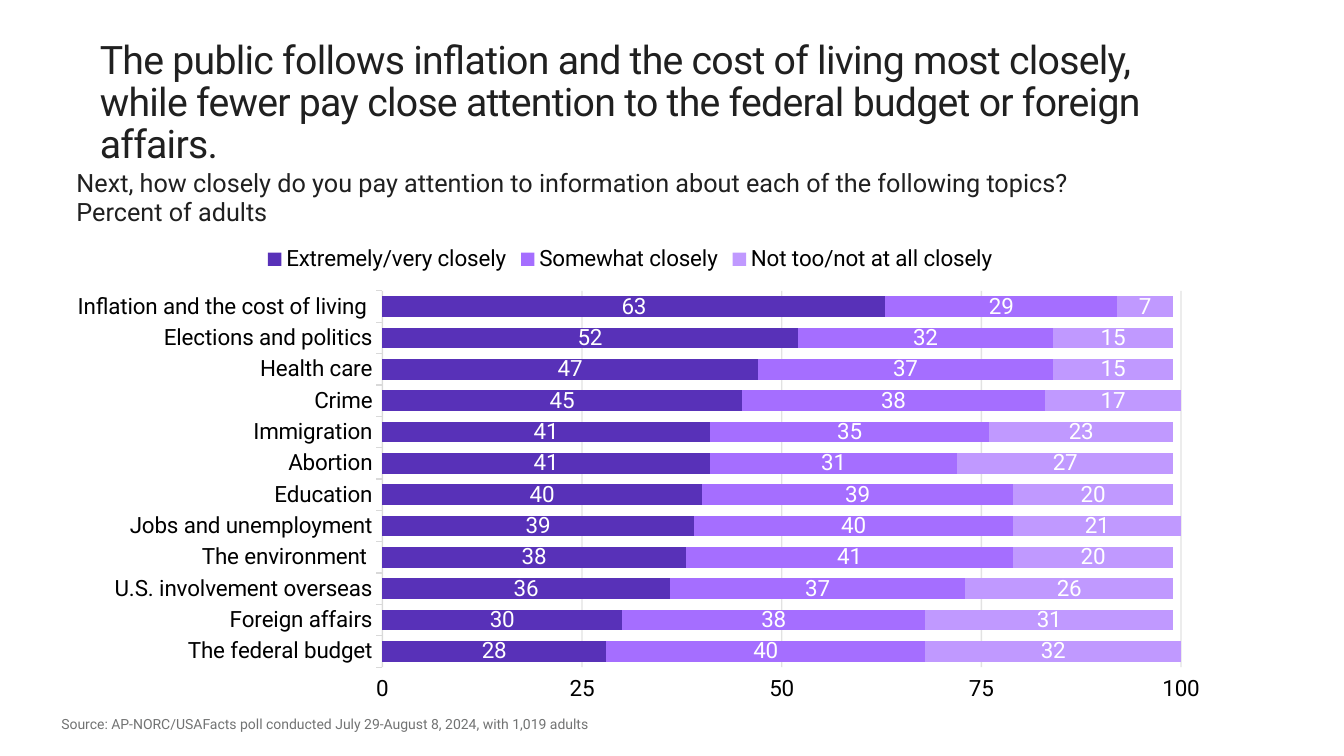
from lxml.etree import SubElement
from pptx import Presentation
from pptx.chart.data import CategoryChartData
from pptx.dml.color import RGBColor
from pptx.enum.chart import (XL_CHART_TYPE, XL_LABEL_POSITION, XL_LEGEND_POSITION,
                             XL_TICK_LABEL_POSITION, XL_TICK_MARK)
from pptx.enum.text import MSO_ANCHOR, MSO_AUTO_SIZE, PP_ALIGN
from pptx.oxml import parse_xml
from pptx.oxml.ns import nsdecls, qn
from pptx.util import Inches, Pt

FONT = "Roboto"
COLORS = {"heading": "202020", "source": "727373", "black": "000000", "white": "FFFFFF",
          "axis": "D9D9D9", "grid": "C7C7C7"}
SERIES = {"Extremely/very closely": "5831B8",
          "Somewhat closely": "A56EFF",
          "Not too/not at all closely": "C099FF"}
TOPICS = [
    ("The federal budget", 28, 40, 32),
    ("Foreign affairs", 30, 38, 31),
    ("U.S. involvement overseas", 36, 37, 26),
    ("The environment ", 38, 41, 20),
    ("Jobs and unemployment", 39, 40, 21),
    ("Education", 40, 39, 20),
    ("Abortion", 41, 31, 27),
    ("Immigration", 41, 35, 23),
    ("Crime", 45, 38, 17),
    ("Health care", 47, 37, 15),
    ("Elections and politics", 52, 32, 15),
    ("Inflation and the cost of living ", 63, 29, 7),
]
PLOT_AREA = {"x": 0.286, "y": 0.114, "w": 0.69, "h": 0.763}


def rgb(name):
    return RGBColor.from_string(COLORS[name])


def style_font(font, size, color):
    font.name = FONT
    font.size = Pt(size)
    font.bold = False
    font.color.rgb = rgb(color)


def fill_text(sp, box, text, size, color, spacing, inset=0.0, anchor=MSO_ANCHOR.TOP):
    """Place a text shape and give it one formatted paragraph."""
    sp.left, sp.top, sp.width, sp.height = (Inches(v) for v in box)
    tf = sp.text_frame
    tf.word_wrap = True
    tf.auto_size = MSO_AUTO_SIZE.NONE
    tf.vertical_anchor = anchor
    tf.margin_left = Inches(inset)
    tf.margin_top = tf.margin_right = tf.margin_bottom = 0
    p = tf.paragraphs[0]
    p.text = text
    p.alignment = PP_ALIGN.LEFT
    p.line_spacing = spacing
    for r in p.runs:
        style_font(r.font, size, color)


def add_text(slide, box, *args, **kwargs):
    sp = slide.shapes.add_textbox(0, 0, 0, 0)
    fill_text(sp, box, *args, **kwargs)


def set_plot_layout(chart):
    """Fix the inner plot area as fractions of the chart."""
    area = chart._chartSpace.chart.plotArea
    for old in area.findall(qn("c:layout")):
        area.remove(old)
    layout = parse_xml(
        f'<c:layout {nsdecls("c")}><c:manualLayout><c:layoutTarget val="inner"/>'
        '<c:xMode val="edge"/><c:yMode val="edge"/>'
        + "".join(f'<c:{k} val="{v}"/>' for k, v in PLOT_AREA.items())
        + "</c:manualLayout></c:layout>")
    area.insert(0, layout)


def style_axes(chart):
    cat, val = chart.category_axis, chart.value_axis
    for axis in (cat, val):
        style_font(axis.tick_labels.font, 16, "black")
    cat.major_tick_mark = XL_TICK_MARK.OUTSIDE
    cat.format.line.color.rgb = rgb("axis")
    cat.format.line.width = Pt(0.75)
    val.minimum_scale, val.maximum_scale, val.major_unit = 0, 100, 25
    val.major_tick_mark = XL_TICK_MARK.NONE
    val.tick_label_position = XL_TICK_LABEL_POSITION.LOW
    val.format.line.fill.background()
    val.has_major_gridlines = True
    grid = val.major_gridlines.format.line
    grid.color.rgb = rgb("grid")
    grid.width = Pt(1)
    color = val.major_gridlines._xAx.find(qn("c:majorGridlines")).find(".//" + qn("a:srgbClr"))
    SubElement(color, qn("a:alpha"), val="50000")


def add_attention_chart(slide, box):
    data = CategoryChartData()
    names, *columns = zip(*TOPICS)
    data.categories = names
    for name, values in zip(SERIES, columns):
        data.add_series(name, values)
    chart = slide.shapes.add_chart(XL_CHART_TYPE.BAR_STACKED,
                                   *(Inches(v) for v in box), data).chart
    style_font(chart.font, 16, "black")
    chart.has_title = False
    chart.has_legend = True
    chart.legend.position = XL_LEGEND_POSITION.TOP
    chart.legend.include_in_layout = False
    style_font(chart.legend.font, 16, "black")

    plot = chart.plots[0]
    plot.gap_width, plot.overlap = 50, 100
    plot.vary_by_categories = False
    for series in plot.series:
        series.format.fill.solid()
        series.format.fill.fore_color.rgb = RGBColor.from_string(SERIES[series.name])
        labels = series.data_labels
        labels.show_value = True
        labels.position = XL_LABEL_POSITION.CENTER
        style_font(labels.font, 16, "white")
    style_axes(chart)
    set_plot_layout(chart)


def main():
    prs = Presentation()
    prs.slide_width, prs.slide_height = Inches(13.33), Inches(7.5)
    slide = prs.slides.add_slide(prs.slide_layouts[5])

    title = slide.shapes.title
    fill_text(title, (0.99, 0.4, 11.15, 1.03),
              "The public follows inflation and the cost of living most closely, while fewer "
              "pay close attention to the federal budget or foreign affairs.",
              28, "heading", 0.9)
    for r in title.text_frame.paragraphs[0].runs:
        r.font._element.set("spc", "-50")

    add_text(slide, (0.66, 1.68, 11.48, 0.74),
             "Next, how closely do you pay attention to information about each of the "
             "following topics? \vPercent of adults",
             18, "heading", 0.95, inset=0.1)
    add_attention_chart(slide, (0.51, 2.33, 11.48, 4.89))
    add_text(slide, (0.51, 7.07, 7.5, 0.23),
             "Source: AP-NORC/USAFacts poll conducted July 29-August 8, 2024, with 1,019 adults",
             10, "source", 0.95, inset=0.1, anchor=MSO_ANCHOR.MIDDLE)
    prs.save("out.pptx")


if __name__ == "__main__":
    main()
